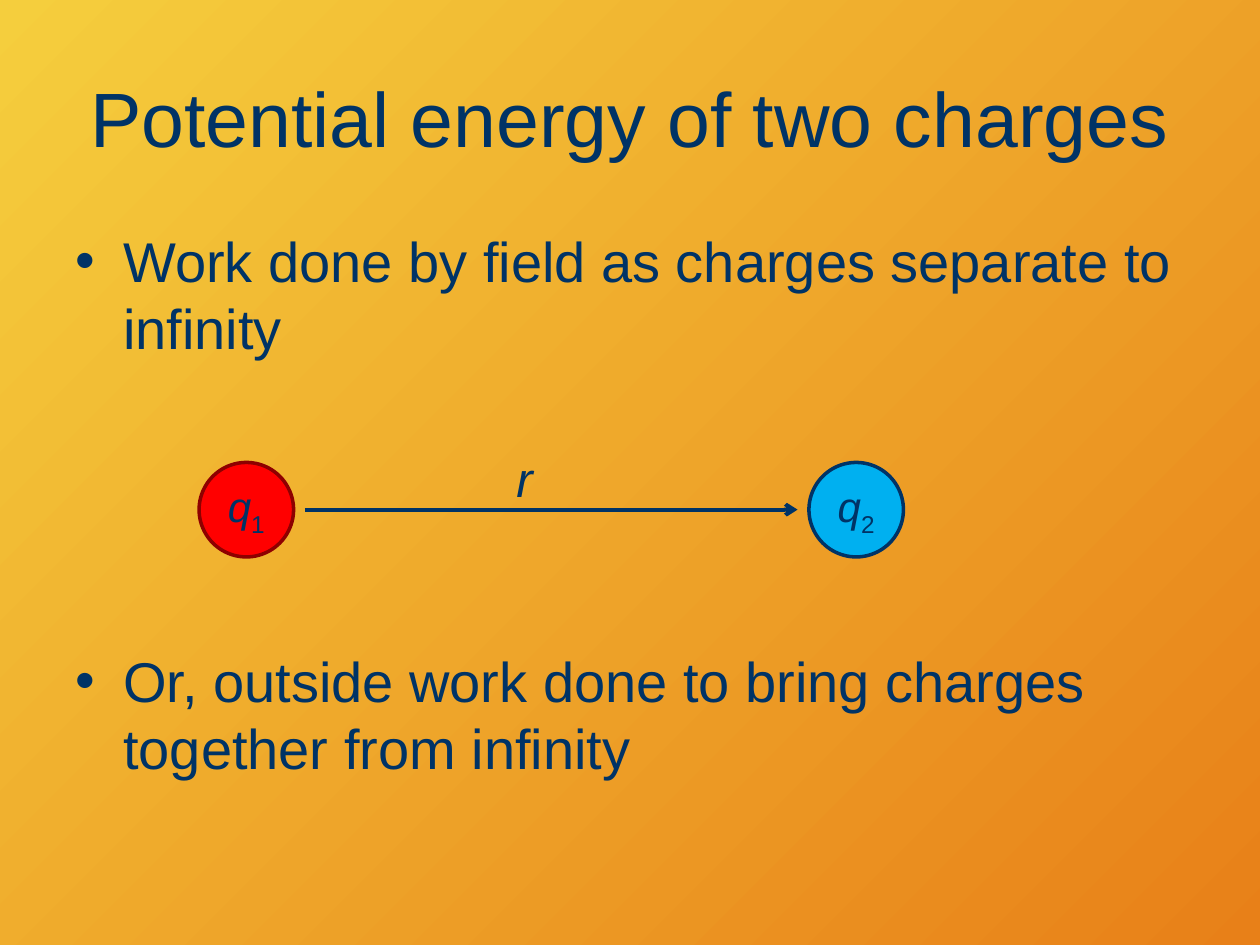
import pptx
import pptx.dml.color
import pptx.enum.shapes
import pptx.enum.text
import pptx.oxml
import pptx.oxml.ns
import pptx.util

Inches = pptx.util.Inches
Pt = pptx.util.Pt
RGBColor = pptx.dml.color.RGBColor
PP_ALIGN = pptx.enum.text.PP_ALIGN
MSO_ANCHOR = pptx.enum.text.MSO_ANCHOR
MSO_AUTO_SIZE = pptx.enum.text.MSO_AUTO_SIZE

NAVY = RGBColor(0x00, 0x33, 0x66)
RED = RGBColor(0xFF, 0x00, 0x00)
DARK_RED = RGBColor(0x8E, 0x00, 0x00)
BLUE = RGBColor(0x00, 0xB0, 0xF0)
YELLOW = RGBColor(0xF5, 0xCE, 0x3D)
ORANGE = RGBColor(0xE8, 0x80, 0x18)

MARGIN = 0.5
TEXT_WIDTH = 9
CHARGE_SIZE = 0.75
CHARGE_TOP = 3.67
AXIS_Y = CHARGE_TOP + CHARGE_SIZE / 2


def apply(obj, formats):
    for name, value in formats.items():
        setattr(obj, name, value)


def sub_element(parent, tag, **attributes):
    child = pptx.oxml.parse_xml(f'<a:{tag} {pptx.oxml.ns.nsdecls("a")}/>')
    for name, value in attributes.items():
        child.set(name, value)
    parent.append(child)


def add_run(p, text, size, italic=False):
    r = p.add_run()
    r.text = text
    apply(r.font, {"name": "Arial", "size": Pt(size), "italic": italic})
    r.font.color.rgb = NAVY
    return r


def add_text(s, box, text, size, italic=False, **frame_formats):
    sp = s.shapes.add_textbox(*map(Inches, box))
    tf = sp.text_frame
    apply(tf, {"word_wrap": True, **frame_formats})
    p = tf.paragraphs[0]
    add_run(p, text, size, italic)
    return p


def add_bullet(s, top, text):
    p = add_text(s, (MARGIN, top, TEXT_WIDTH, 1.33), text, 32)
    p.space_before = Pt(6.4)
    pPr = p._p.get_or_add_pPr()
    pPr.set("marL", str(Inches(0.38)))
    pPr.set("indent", str(-Inches(0.38)))
    sub_element(pPr, "buFont", typeface="Arial")
    sub_element(pPr, "buChar", char="•")


def add_charge(s, left, index, fill, outline):
    box = (left, CHARGE_TOP, CHARGE_SIZE, CHARGE_SIZE)
    sp = s.shapes.add_shape(pptx.enum.shapes.MSO_SHAPE.OVAL, *map(Inches, box))
    sp.shadow.inherit = False
    sp.fill.solid()
    sp.fill.fore_color.rgb = fill
    sp.line.color.rgb = outline
    sp.line.width = Pt(2)
    tf = sp.text_frame
    apply(tf, {"word_wrap": False, "vertical_anchor": MSO_ANCHOR.MIDDLE})
    p = tf.paragraphs[0]
    p.alignment = PP_ALIGN.CENTER
    add_run(p, "q", 24, italic=True)
    subscript = add_run(p, index, 24)
    subscript.font._element.set("baseline", "-25000")


def add_arrow(s, start, end, y):
    line = s.shapes.add_connector(
        pptx.enum.shapes.MSO_CONNECTOR.STRAIGHT,
        Inches(start), Inches(y), Inches(end), Inches(y))
    line.line.color.rgb = NAVY
    line.line.width = Pt(2.25)
    sub_element(line.line._get_or_add_ln(), "tailEnd", type="arrow")
    sub_element(line._element.spPr, "effectLst")


def set_background(s):
    fill = s.background.fill
    fill.gradient()
    fill.gradient_angle = 315
    for stop, color in zip(fill.gradient_stops, (YELLOW, ORANGE)):
        stop.color.rgb = color


def main():
    prs = pptx.Presentation()
    apply(prs, {"slide_width": Inches(10), "slide_height": Inches(7.5)})
    s = prs.slides.add_slide(prs.slide_layouts[6])
    set_background(s)

    title = add_text(s, (MARGIN, 0.3, TEXT_WIDTH, 1.25),
                     "Potential energy of two charges", 44,
                     vertical_anchor=MSO_ANCHOR.MIDDLE)
    title.alignment = PP_ALIGN.CENTER
    add_bullet(s, 1.75, "Work done by field as charges separate to infinity")
    add_charge(s, 1.58, "1", RED, DARK_RED)
    add_charge(s, 6.42, "2", BLUE, NAVY)
    add_text(s, (4, 3.51, 0.33, 0.57), "r", 28, italic=True,
             word_wrap=False, auto_size=MSO_AUTO_SIZE.SHAPE_TO_FIT_TEXT)
    add_arrow(s, 2.42, 6.33, AXIS_Y)
    add_bullet(s, 5.08, "Or, outside work done to bring charges together from infinity")
    prs.save("out.pptx")


if __name__ == "__main__":
    main()
